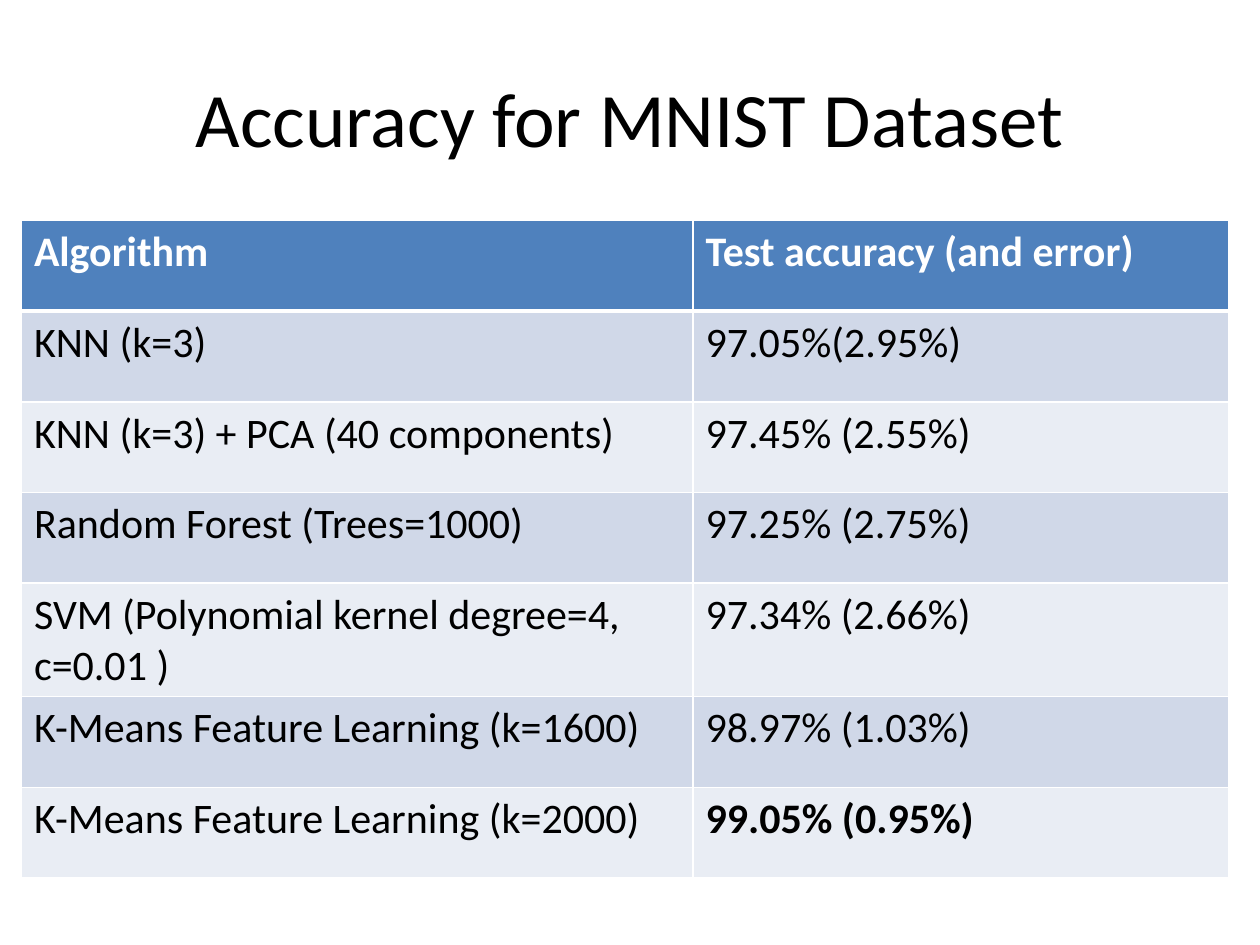
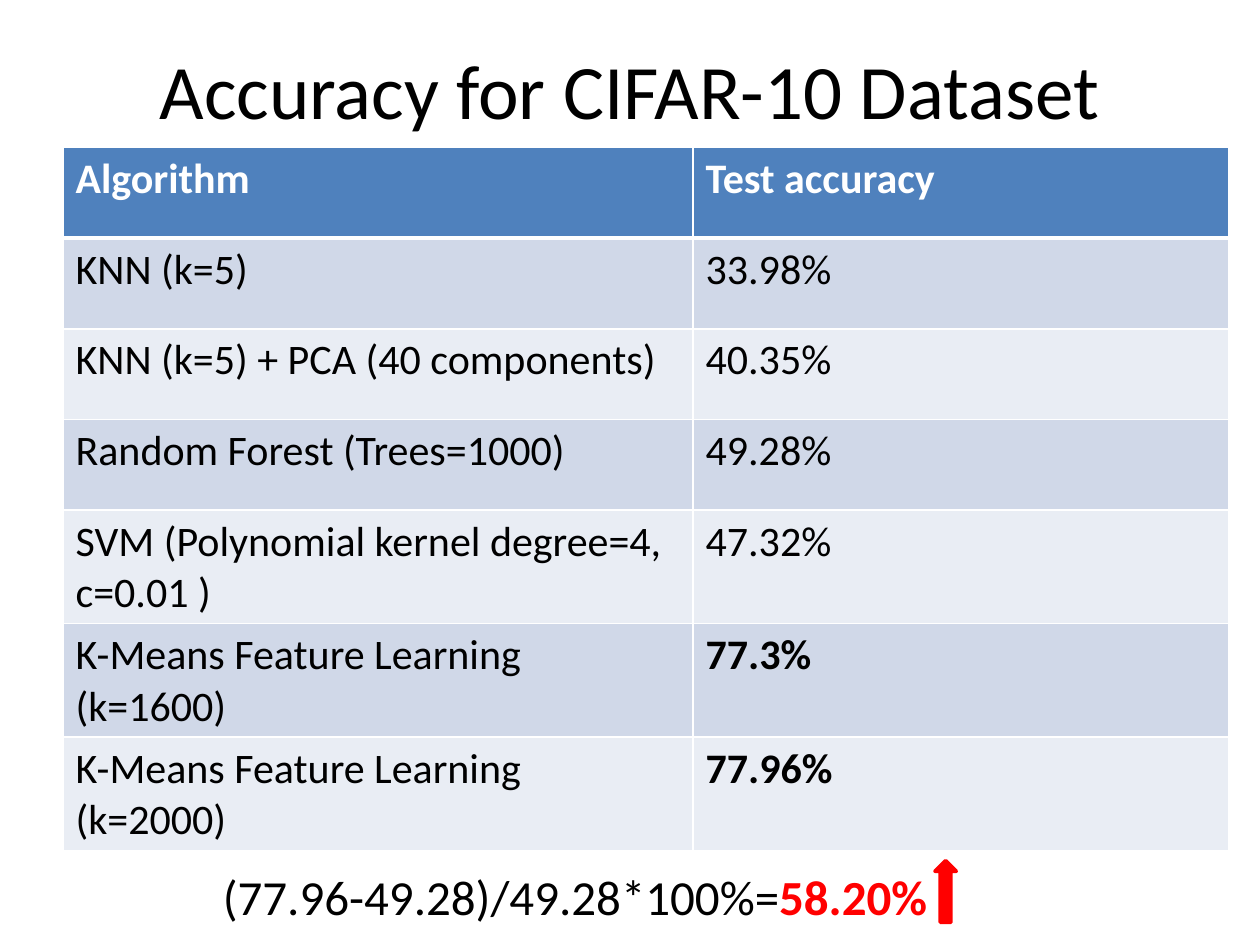
from lxml.etree import SubElement
from pptx import Presentation
from pptx.dml.color import RGBColor
from pptx.enum.shapes import MSO_SHAPE as Shape
from pptx.enum.text import MSO_ANCHOR as Anchor, PP_ALIGN as Align
from pptx.oxml.ns import qn
from pptx.util import Inches, Pt

FONT = "Calibri"
COLORS = {
    "text": "000000",
    "white": "FFFFFF",
    "header": "4F81BD",
    "odd_row": "D0D8E8",
    "even_row": "E9EDF4",
    "gain": "FF0000",
}
SLIDE_WIDTH, SLIDE_HEIGHT = 10, 7.5
MARGIN = 0.05 * SLIDE_WIDTH
TABLE_RIGHT = 9.75
ACCURACY_WIDTH = 4.25
ROW_HEIGHT = 0.72

MNIST_ROWS = [
    ("Algorithm", "Test accuracy (and error)"),
    ("KNN (k=3)", "97.05%(2.95%)"),
    ("KNN (k=3) + PCA (40 components)", "97.45% (2.55%)"),
    ("Random Forest (Trees=1000)", "97.25% (2.75%)"),
    ("SVM (Polynomial kernel degree=4, c=0.01 )", "97.34% (2.66%)"),
    ("K-Means Feature Learning (k=1600)", "98.97% (1.03%)"),
    ("K-Means Feature Learning (k=2000)", "99.05% (0.95%)"),
]
CIFAR_ROWS = [
    ("Algorithm", "Test accuracy"),
    ("KNN (k=5)", "33.98%"),
    ("KNN (k=5) + PCA (40 components)", "40.35%"),
    ("Random Forest (Trees=1000)", "49.28%"),
    ("SVM (Polynomial kernel degree=4, c=0.01 )", "47.32%"),
    ("K-Means Feature Learning (k=1600)", "77.3%"),
    ("K-Means Feature Learning (k=2000)", "77.96%"),
]


def color(name):
    return RGBColor.from_string(COLORS[name])


def format_run(run, size, color_name="text", bold=False):
    run.font.name = FONT
    run.font.size = Pt(size)
    run.font.bold = bold
    run.font.color.rgb = color(color_name)


def add_text_box(slide, left, top, width, height):
    box = slide.shapes.add_textbox(*map(Inches, (left, top, width, height)))
    box.text_frame.word_wrap = True
    return box.text_frame


def add_title(slide, text, top):
    frame = add_text_box(slide, MARGIN, top, SLIDE_WIDTH - 2 * MARGIN, 1.25)
    frame.vertical_anchor = Anchor.MIDDLE
    frame.text = text
    paragraph = frame.paragraphs[0]
    paragraph.alignment = Align.CENTER
    format_run(paragraph.runs[0], 44)


def set_borders(cell, widths):
    properties = cell._tc.get_or_add_tcPr()
    for position, (side, width) in enumerate(widths.items()):
        line = SubElement(properties, qn(f"a:ln{side}"), w=str(Pt(width)))
        fill = SubElement(line, qn("a:solidFill"))
        SubElement(fill, qn("a:srgbClr"), val=COLORS["white"])
        properties.insert(position, line)


def add_accuracy_table(slide, rows, left, top, best_rows):
    width = TABLE_RIGHT - left
    frame = slide.shapes.add_table(
        len(rows), 2, Inches(left), Inches(top),
        Inches(width), Inches(ROW_HEIGHT * len(rows)))
    table = frame.table
    table.columns[0].width = Inches(width - ACCURACY_WIDTH)
    table.columns[1].width = Inches(ACCURACY_WIDTH)
    for row_index, row in enumerate(rows):
        table.rows[row_index].height = Inches(ROW_HEIGHT)
        is_header = row_index == 0
        band = "header" if is_header else ("even_row", "odd_row")[row_index % 2]
        for column_index, text in enumerate(row):
            cell = table.cell(row_index, column_index)
            cell.text = text
            is_best = column_index == 1 and row_index in best_rows
            format_run(cell.text_frame.paragraphs[0].runs[0], 24,
                       "white" if is_header else "text", is_header or is_best)
            cell.fill.solid()
            cell.fill.fore_color.rgb = color(band)
            set_borders(cell, {"L": 1, "R": 1,
                               "T": 3 if row_index == 1 else 1,
                               "B": 3 if is_header else 1})


def add_gain_formula(slide, formula, gain, left, top):
    paragraph = add_text_box(slide, left, top, 6.42, 0.57).paragraphs[0]
    for text, color_name, bold in ((formula, "text", False), (gain, "gain", True)):
        run = paragraph.add_run()
        run.text = text
        format_run(run, 28, color_name, bold)


def add_gain_arrow(slide, left, top):
    arrow = slide.shapes.add_shape(
        Shape.UP_ARROW, Inches(left), Inches(top), Inches(0.17), Inches(0.49))
    arrow.shadow.inherit = False
    arrow.fill.solid()
    arrow.fill.fore_color.rgb = color("gain")
    arrow.line.color.rgb = color("gain")
    arrow.line.width = Pt(2)


def add_accuracy_slide(presentation, title, title_top, rows, left, top, best_rows):
    slide = presentation.slides.add_slide(presentation.slide_layouts[6])
    add_title(slide, title, title_top)
    add_accuracy_table(slide, rows, left, top, best_rows)
    return slide


def main():
    presentation = Presentation()
    presentation.slide_width = Inches(SLIDE_WIDTH)
    presentation.slide_height = Inches(SLIDE_HEIGHT)
    add_accuracy_slide(presentation, "Accuracy for MNIST Dataset", 0.3,
                       MNIST_ROWS, 0.17, 1.75, {6})
    cifar_slide = add_accuracy_slide(presentation, "Accuracy for CIFAR-10 Dataset", 0.08,
                                     CIFAR_ROWS, MARGIN, 1.17, {5, 6})
    formula_top = 6.83
    add_gain_formula(cifar_slide, "(77.96-49.28)/49.28*100%=", "58.20%", 1.67, formula_top)
    add_gain_arrow(cifar_slide, 7.42, formula_top)
    presentation.save("out.pptx")


if __name__ == "__main__":
    main()
